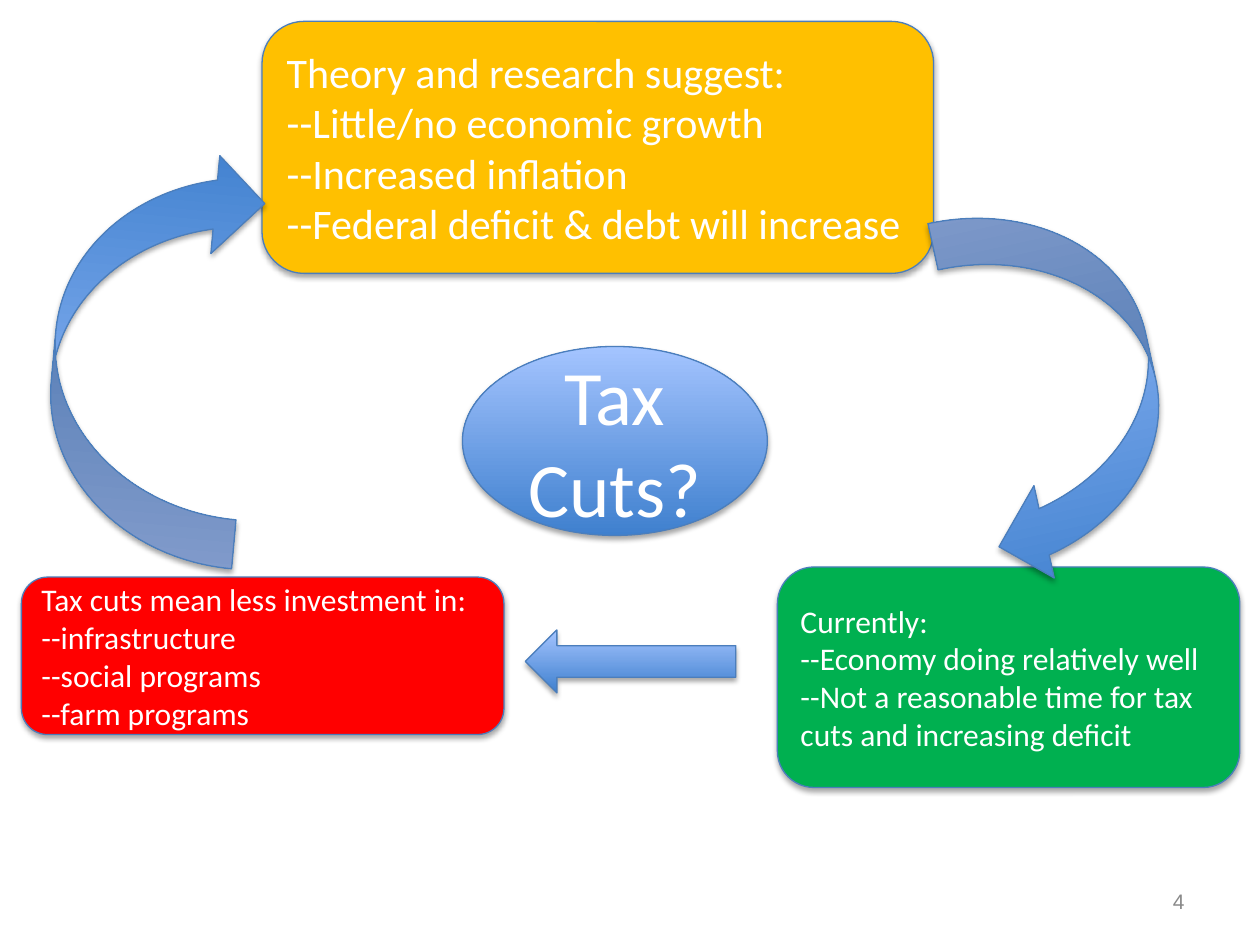
"""Build a slide showing the tax cut cycle as three linked boxes."""
from dataclasses import dataclass

from lxml import etree
from pptx import Presentation
from pptx import util as u
from pptx.dml.color import RGBColor
from pptx.enum import shapes, text
from pptx.oxml.ns import qn


@dataclass(frozen=True)
class Theme:
    white: str = "FFFFFF"
    amber: str = "FFC000"
    green: str = "00B050"
    red: str = "FF0000"
    outline: str = "4B7EBC"
    gray: str = "898989"
    gradient: tuple = ("3F80CE", "A4C4FF")
    font: str = "Calibri"
    number_font: str = "Arial"
    title: int = 44
    large: int = 24
    body: int = 18
    small: int = 12


class SlideBuilder:
    def __init__(self, slide, theme):
        self.slide = slide
        self.theme = theme

    def shape(self, kind, place, fill=None, rotation=0):
        part = self.slide.shapes.add_shape(kind, *map(u.Inches, place))
        part.rotation = rotation
        if fill:
            part.fill.solid()
            part.fill.fore_color.rgb = RGBColor.from_string(fill)
        else:
            part.fill.gradient()
            part.fill.gradient_angle = 90
            for stop, color in zip(part.fill.gradient_stops, self.theme.gradient):
                stop.color.rgb = RGBColor.from_string(color)
        part.line.color.rgb = RGBColor.from_string(self.theme.outline)
        part.line.width = u.Pt(0.75)
        self.cast_shadow(part)
        return part

    def cast_shadow(self, part):
        part.shadow.inherit = False
        effects = part._element.spPr.find(qn("a:effectLst"))
        outer = etree.SubElement(
            effects, qn("a:outerShdw"), blurRad=str(u.Pt(3.1)),
            dist=str(u.Pt(1.8)), dir="5400000", rotWithShape="0")
        black = etree.SubElement(outer, qn("a:srgbClr"), val="000000")
        etree.SubElement(black, qn("a:alpha"), val="35000")

    def set_lines(self, part, lines, size, align, color=None, font=None):
        frame = part.text_frame
        frame.word_wrap = True
        frame.vertical_anchor = text.MSO_ANCHOR.MIDDLE
        frame.text = "\n".join(lines)
        for paragraph in frame.paragraphs:
            paragraph.alignment = align
            for run in paragraph.runs:
                run.font.size = u.Pt(size)
                run.font.name = font or self.theme.font
                run.font.color.rgb = RGBColor.from_string(color or self.theme.white)

    def topic(self, place, wording):
        oval = self.shape(shapes.MSO_SHAPE.OVAL, place)
        self.set_lines(oval, [wording], self.theme.title, text.PP_ALIGN.CENTER)

    def box(self, place, fill, size, lines):
        card = self.shape(shapes.MSO_SHAPE.ROUNDED_RECTANGLE, place, fill)
        self.set_lines(card, lines, size, text.PP_ALIGN.LEFT)

    def number(self, place, wording):
        label = self.slide.shapes.add_textbox(*map(u.Inches, place))
        self.set_lines(label, [wording], self.theme.small, text.PP_ALIGN.RIGHT,
                       self.theme.gray, self.theme.number_font)


def main():
    deck = Presentation()
    deck.slide_width, deck.slide_height = u.Inches(10), u.Inches(7.5)
    theme = Theme()
    cycle = SlideBuilder(deck.slides.add_slide(deck.slide_layouts[6]), theme)

    cycle.number((7.17, 6.95, 2.33, 0.4), "4")
    cycle.topic((3.67, 2.75, 2.42, 1.5), "Tax Cuts?")
    cycle.box((2.08, 0.17, 5.33, 2), theme.amber, theme.large, [
        "Theory and research suggest:",
        "--Little/no economic growth",
        "--Increased inflation",
        "--Federal deficit & debt will increase",
    ])
    cycle.box((6.17, 4.5, 3.67, 1.75), theme.green, theme.body, [
        "Currently:",
        "--Economy doing relatively well",
        "--Not a reasonable time for tax cuts and increasing deficit",
    ])
    cycle.box((0.17, 4.58, 3.83, 1.25), theme.red, theme.body, [
        "Tax cuts mean less investment in:",
        "--infrastructure",
        "--social programs",
        "--farm programs",
    ])

    curved = shapes.MSO_SHAPE.CURVED_LEFT_ARROW
    cycle.shape(curved, (7.67, 1.58, 1.5, 3), rotation=347.6)
    cycle.shape(curved, (0.43, 1.15, 1.56, 3.3), rotation=185.2)
    cycle.shape(shapes.MSO_SHAPE.LEFT_ARROW, (4.17, 5, 1.67, 0.5))

    deck.save("out.pptx")


if __name__ == "__main__":
    main()
